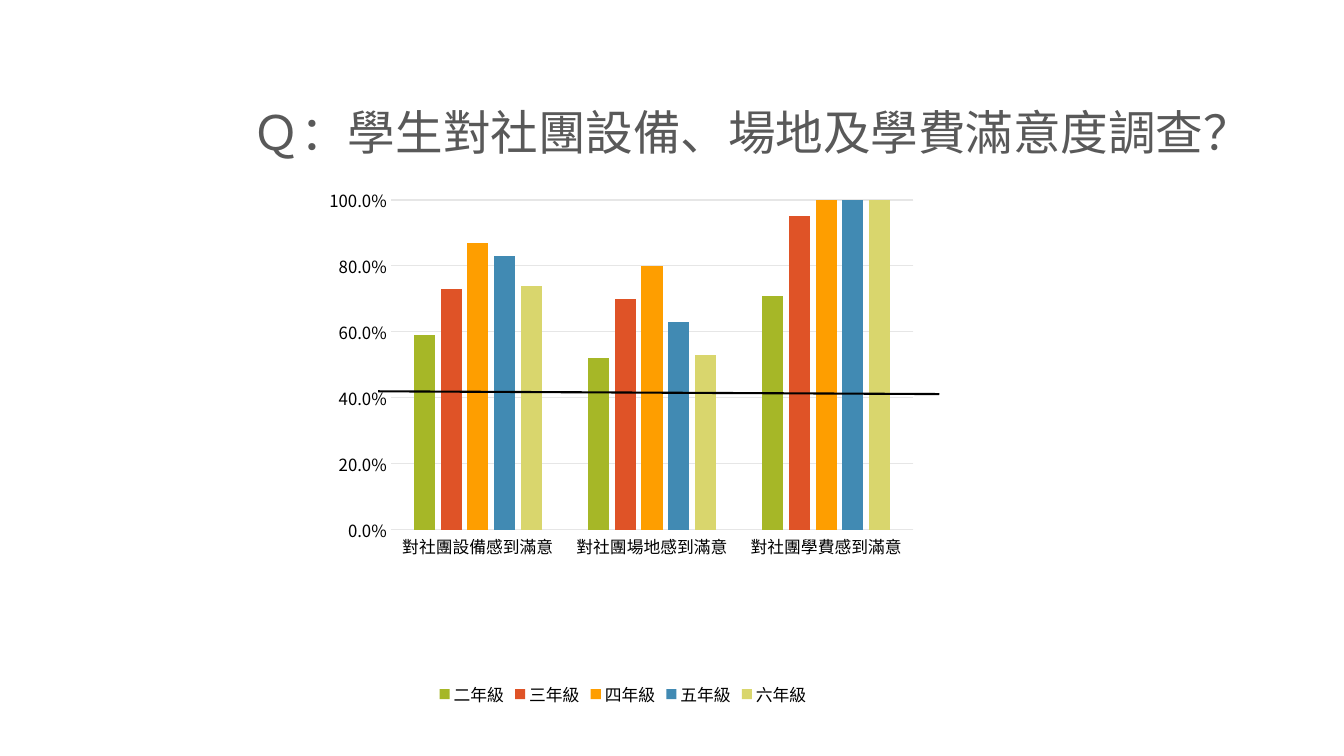
from lxml import etree
from pptx import Presentation
from pptx import util as u
from pptx.chart.data import CategoryChartData
from pptx.dml.color import RGBColor
from pptx.enum import chart as charts, shapes, text
from pptx.oxml import parse_xml
from pptx.oxml.ns import nsdecls, qn

TITLE = "Ｑ：學生對社團設備、場地及學費滿意度調查？"
QUESTIONS = ["對社團設備感到滿意", "對社團場地感到滿意", "對社團學費感到滿意"]
GRADES = [
    ("二年級", (0.59, 0.52, 0.71), "A6B727"),
    ("三年級", (0.73, 0.7, 0.95), "DF5327"),
    ("四年級", (0.87, 0.8, 1), "FE9E00"),
    ("五年級", (0.83, 0.63, 1), "418AB3"),
    ("六年級", (0.74, 0.53, 1), "D9D66D"),
]


def color(value):
    return RGBColor.from_string(value)


def format_font(font, name, size, ink):
    font.name = name
    font.size = u.Pt(size)
    font.color.rgb = color(ink)
    etree.SubElement(font._element, qn("a:ea")).set("typeface", name)


def write_text(para, wording, **style):
    span = para.add_run()
    span.text = wording
    format_font(span.font, **style)


def set_line(line, ink, width):
    line.color.rgb = color(ink)
    line.width = u.Pt(width)


class SlideBuilder:
    face = "Noto Sans CJK SC"
    title_ink = "595959"
    ink = "000000"
    grid_ink = "E6E6E6"

    def __init__(self, deck):
        self.page = deck.slides.add_slide(deck.slide_layouts[5])

    def title(self, wording, left, top, width, height):
        box = self.page.shapes.title
        box.left, box.top = u.Cm(left), u.Cm(top)
        box.width, box.height = u.Cm(width), u.Cm(height)
        frame = box.text_frame
        frame.word_wrap = True
        frame.auto_size = text.MSO_AUTO_SIZE.NONE
        frame.vertical_anchor = text.MSO_ANCHOR.BOTTOM
        para = frame.paragraphs[0]
        para.alignment = text.PP_ALIGN.LEFT
        para.line_spacing = 0.9
        write_text(para, wording, name=self.face, size=34, ink=self.title_ink)

    def column_chart(self, categories, series, left, top, width, height):
        data = CategoryChartData(number_format="0.0%")
        data.categories = categories
        for name, values, _ in series:
            data.add_series(name, values)
        chart = self.page.shapes.add_chart(
            charts.XL_CHART_TYPE.COLUMN_CLUSTERED,
            u.Cm(left), u.Cm(top), u.Cm(width), u.Cm(height), data).chart
        chart.has_title = False
        chart.has_legend = True
        chart.legend.position = charts.XL_LEGEND_POSITION.BOTTOM
        chart.legend.include_in_layout = False

        plot = chart.plots[0]
        plot.gap_width, plot.overlap = 219, -27
        plot.vary_by_categories = False
        for bars, (_, _, fill) in zip(plot.series, series):
            bars.format.fill.solid()
            bars.format.fill.fore_color.rgb = color(fill)

        across, upward = chart.category_axis, chart.value_axis
        for axis in (across, upward):
            axis.major_tick_mark = charts.XL_TICK_MARK.NONE
            axis.minor_tick_mark = charts.XL_TICK_MARK.NONE
        set_line(across.format.line, self.grid_ink, 0.75)
        upward.format.line.fill.background()
        upward.minimum_scale, upward.maximum_scale = 0, 1
        upward.major_unit = 0.2
        upward.has_major_gridlines = True
        set_line(upward.major_gridlines.format.line, self.grid_ink, 0.75)
        upward.tick_labels.number_format = "0.0%"
        upward.tick_labels.number_format_is_linked = False

        for font in (chart.font, chart.legend.font,
                     across.tick_labels.font, upward.tick_labels.font):
            format_font(font, self.face, 12, self.ink)
        self.place_plot(chart, x=0.121, y=0.062, w=0.853, h=0.606)

    def place_plot(self, chart, **fractions):
        area = chart.element.find(".//" + qn("c:plotArea"))
        for layout in area.findall(qn("c:layout")):
            area.remove(layout)
        parts = '<c:layoutTarget val="inner"/>'
        parts += "".join(f'<c:{side}Mode val="edge"/>' for side in "xy")
        parts += "".join(f'<c:{key} val="{value}"/>' for key, value in fractions.items())
        area.insert(0, parse_xml(
            f'<c:layout {nsdecls("c")}><c:manualLayout>{parts}</c:manualLayout></c:layout>'))

    def line(self, start, end, width):
        rule = self.page.shapes.add_connector(
            shapes.MSO_CONNECTOR.STRAIGHT, *(u.Cm(value) for value in start + end))
        set_line(rule.line, self.ink, width)
        etree.SubElement(rule.element.spPr, qn("a:effectLst"))


def main():
    deck = Presentation()
    deck.slide_width, deck.slide_height = u.Cm(33.87), u.Cm(19.05)
    slide = SlideBuilder(deck)
    slide.title(TITLE, 6.12, 0.84, 26.04, 3.33)
    slide.column_chart(QUESTIONS, GRADES, 7.98, 4.19, 15.44, 13.72)
    slide.line((9.53, 9.86), (23.67, 9.93), 1.5)
    deck.save("out.pptx")


if __name__ == "__main__":
    main()
